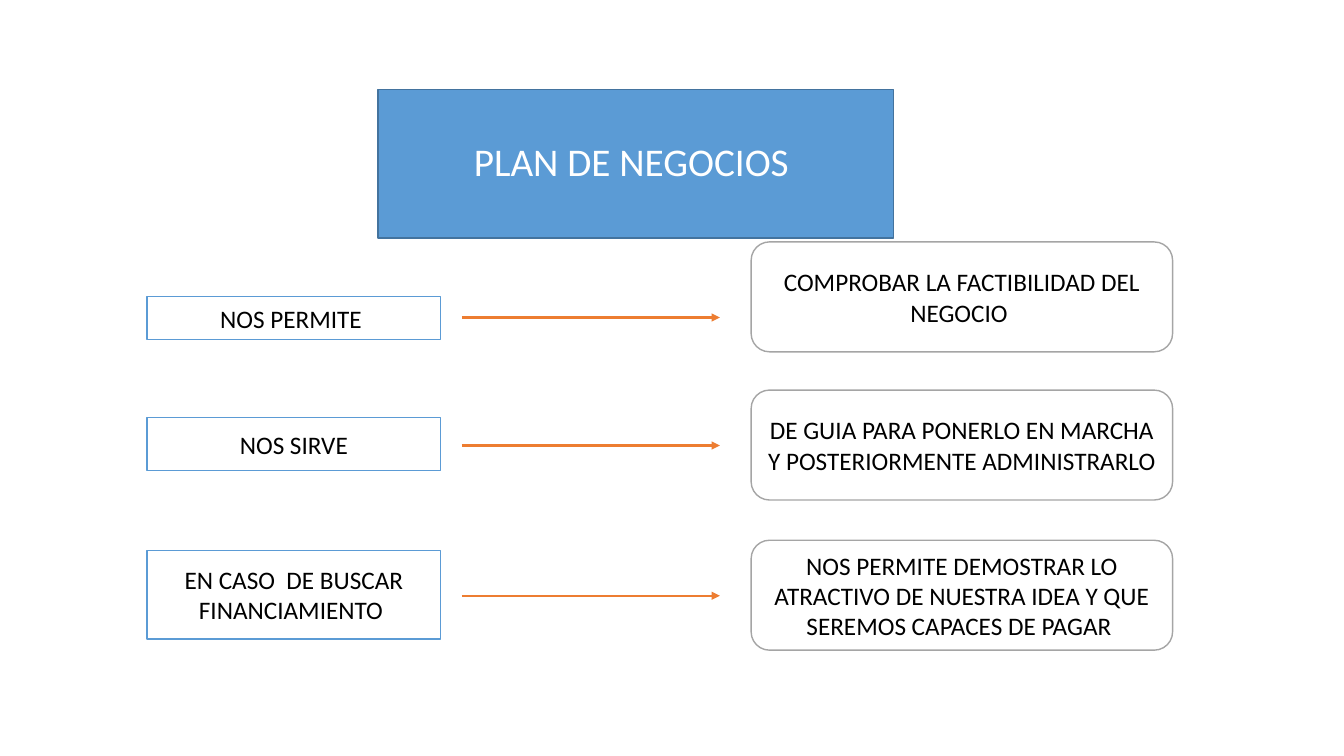
"""Build the business plan slide: a title ellipse above three reason-to-result rows."""
from dataclasses import dataclass

from lxml import etree
from pptx import Presentation
from pptx.dml.color import RGBColor
from pptx.enum.shapes import MSO_CONNECTOR, MSO_SHAPE
from pptx.enum.text import MSO_ANCHOR, MSO_AUTO_SIZE, PP_ALIGN
from pptx.oxml.ns import qn
from pptx.util import Inches, Pt

RECTANGLE = MSO_SHAPE.RECTANGLE
ROUNDED = MSO_SHAPE.ROUNDED_RECTANGLE
STRAIGHT = MSO_CONNECTOR.STRAIGHT
MIDDLE = MSO_ANCHOR.MIDDLE
CENTER = PP_ALIGN.CENTER
NO_AUTOFIT = MSO_AUTO_SIZE.NONE

FONT = "Calibri"
WHITE, BLACK = "FFFFFF", "000000"
BLUE, DARK_BLUE = "5B9BD5", "43739E"
GRAY, ORANGE = "A5A5A5", "ED7D31"

REASON_LEFT, REASON_WIDTH = 1.46, 2.91
RESULT_LEFT, RESULT_WIDTH, RESULT_HEIGHT = 7.45, 4.18, 1.09
ARROW_START, ARROW_END = 4.58, 7.14


@dataclass(frozen=True)
class Row:
    """A reason, its result and their vertical places in inches."""
    reason: str
    result: str
    middle: float
    reason_top: float
    reason_height: float
    result_top: float


ROWS = (
    Row("NOS PERMITE ", "COMPROBAR LA FACTIBILIDAD DEL NEGOCIO ",
        3.15, 2.94, 0.43, 2.4),
    Row("NOS SIRVE",
        "DE GUIA PARA PONERLO EN MARCHA Y POSTERIORMENTE ADMINISTRARLO ",
        4.42, 4.14, 0.53, 3.87),
    Row("EN CASO  DE BUSCAR FINANCIAMIENTO ",
        "NOS PERMITE DEMOSTRAR LO ATRACTIVO DE NUESTRA IDEA Y QUE "
        "SEREMOS CAPACES DE PAGAR ",
        5.91, 5.46, 0.88, 5.36),
)


def color(value: str) -> RGBColor:
    """Turn a hex string into a colour."""
    return RGBColor.from_string(value)


def paint(shape, *, fill: str, line: str) -> None:
    """Give a shape a solid fill and a thin outline."""
    shape.fill.solid()
    shape.fill.fore_color.rgb = color(fill)
    shape.line.color.rgb = color(line)
    shape.line.width = Pt(1)


def write(shape, text: str, *, size: float = 18, ink: str = BLACK,
          spacing: float = 1.0) -> None:
    """Write centred text in a shape."""
    frame = shape.text_frame
    frame.word_wrap = True
    frame.auto_size = NO_AUTOFIT
    frame.vertical_anchor = MIDDLE
    para = frame.paragraphs[0]
    para.alignment = CENTER
    para.line_spacing = spacing
    span = para.add_run()
    span.text = text
    span.font.name = FONT
    span.font.size = Pt(size)
    span.font.color.rgb = color(ink)


def add_title(page) -> None:
    """Turn the title placeholder into the heading ellipse."""
    title = page.shapes.title
    title.left, title.top = Inches(3.75), Inches(0.89)
    title.width, title.height = Inches(5.11), Inches(1.47)
    properties = title.element.spPr
    geometry = etree.SubElement(properties, qn("a:prstGeom"), prst="ellipse")
    etree.SubElement(geometry, qn("a:avLst"))
    paint(title, fill=BLUE, line=DARK_BLUE)
    write(title, "PLAN DE NEGOCIOS ", size=28, ink=WHITE, spacing=0.9)


def add_box(page, text: str, kind: MSO_SHAPE, *, left: float, top: float,
            width: float, height: float, line: str) -> None:
    """Add a white outlined box with text."""
    box = page.shapes.add_shape(kind, Inches(left), Inches(top),
                                Inches(width), Inches(height))
    box.shadow.inherit = False
    paint(box, fill=WHITE, line=line)
    write(box, text)


def add_arrow(page, middle: float) -> None:
    """Add an arrow pointing from the reasons to the results."""
    arrow = page.shapes.add_connector(STRAIGHT, Inches(ARROW_START), Inches(middle),
                                      Inches(ARROW_END), Inches(middle))
    arrow.line.color.rgb = color(ORANGE)
    arrow.line.width = Pt(1.5)
    properties = arrow.element.spPr
    etree.SubElement(properties.find(qn("a:ln")), qn("a:tailEnd"), type="triangle")
    etree.SubElement(properties, qn("a:effectLst"))


def main() -> None:
    """Build and save the deck."""
    deck = Presentation()
    deck.slide_width, deck.slide_height = Inches(13.33), Inches(7.5)
    page = deck.slides.add_slide(deck.slide_layouts.get_by_name("Title Only"))
    add_title(page)
    for row in ROWS:
        add_box(page, row.reason, RECTANGLE, left=REASON_LEFT, top=row.reason_top,
                width=REASON_WIDTH, height=row.reason_height, line=BLUE)
        add_box(page, row.result, ROUNDED, left=RESULT_LEFT, top=row.result_top,
                width=RESULT_WIDTH, height=RESULT_HEIGHT, line=GRAY)
        add_arrow(page, row.middle)
    deck.save("out.pptx")


if __name__ == "__main__":
    main()
